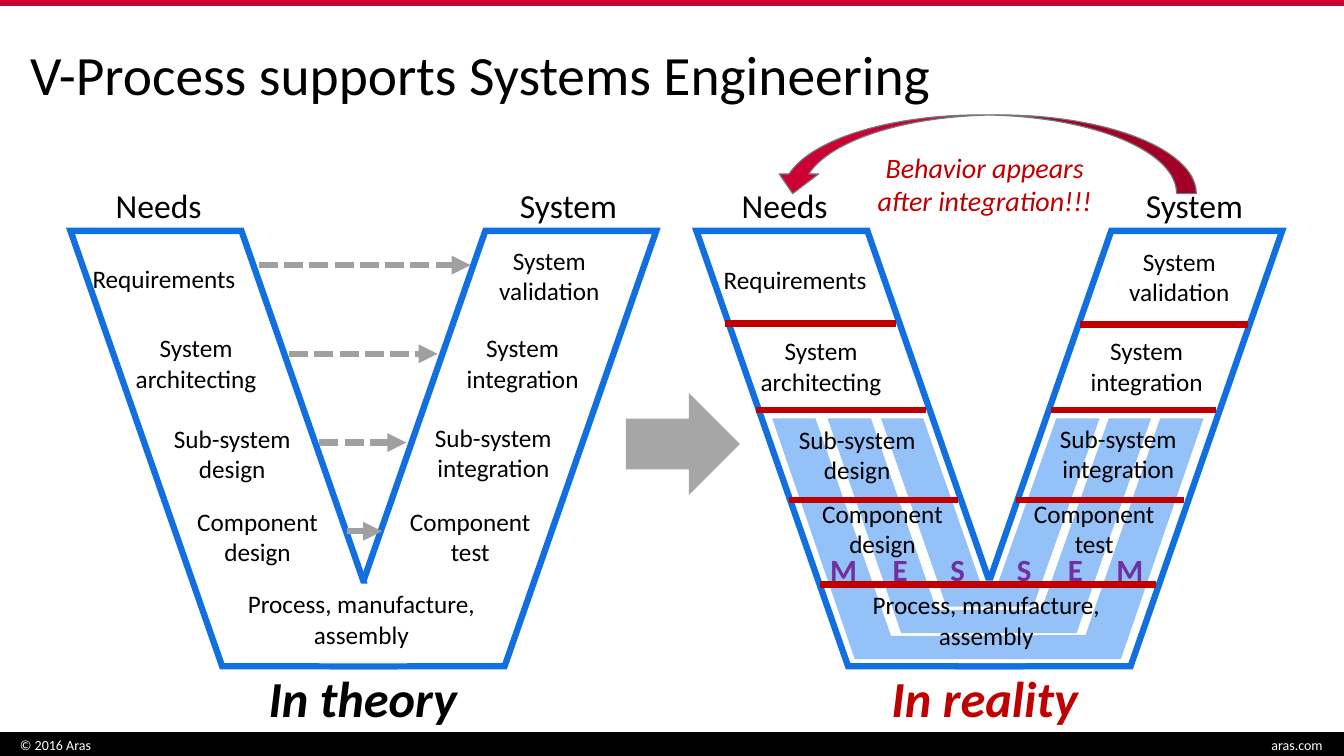
import dataclasses
import typing

import pptx
import pptx.dml.color
import pptx.enum.dml
import pptx.enum.shapes
import pptx.enum.text
import pptx.oxml.ns
import pptx.oxml.xmlchemy
import pptx.util

Pt = pptx.util.Pt
Preset = pptx.enum.shapes.MSO_SHAPE
Align = pptx.enum.text.PP_ALIGN
Anchor = pptx.enum.text.MSO_ANCHOR

COLORS = {
    "black": "000000", "white": "FFFFFF", "crimson": "CC0033", "red": "C00000",
    "blue": "126FE0", "sky": "94C1F7", "purple": "7030A0",
    "gray": "A6A6A6", "arrow": "A0A0A0", "outline": "767676",
}
Point = tuple[float, float]
Box = tuple[float, float, float, float]


@dataclasses.dataclass(frozen=True)
class Stage:
    text: str
    width: float
    theory: Point
    reality: Point
    height: float = 51
    size: float = 18
    align: typing.Any = Align.CENTER
    wrap: bool = False


@dataclasses.dataclass(frozen=True)
class Span:
    start: float
    end: float
    y: float


STAGES = [
    Stage("Needs", 76.3, (75.6, 128.9), (522.7, 128.9), 36, 24, Align.LEFT),
    Stage("System", 84.2, (364.3, 128.9), (811.4, 128.9), 36, 24, Align.LEFT),
    Stage("Requirements", 118, (59, 184.3), (509.8, 185), 28.8, align=Align.LEFT),
    Stage("System\narchitecting", 101.5, (89.3, 234), (535.7, 236.2)),
    Stage("Sub-system\ndesign", 98.6, (116.6, 298.8), (563, 299.5)),
    Stage("Component\ndesign", 101.5, (133.2, 357.8), (579.6, 352.1)),
    Stage("Process, manufacture, assembly", 182.2, (167, 416.9), (613.4, 417.6), wrap=True),
    Stage("Component\ntest", 101.5, (285.1, 357.8), (730.8, 352.1)),
    Stage("Sub-system\nintegration", 98.6, (303.1, 298.1), (749.5, 298.8)),
    Stage("System\nintegration", 95.8, (325.4, 234), (771.1, 236.2)),
    Stage("System validation", 109.4, (337.7, 171.4), (787.7, 172.1), wrap=True),
]
THEORY_ARROWS = [
    Span(start, end, 189.4 + 63.35 * row)
    for row, (start, end) in enumerate(
        [(185, 336.2), (206.6, 312.5), (228.2, 290.2), (247.7, 272.9)])
]
BARRIERS = [
    Span(517.7, 640.1, 231.1), Span(771.1, 891.4, 231.8),
    Span(540, 661.7, 293), Span(751, 868.3, 293),
    Span(563.8, 684, 357.1), Span(725.8, 846, 357.1),
    Span(585.4, 705.6, 417.6), Span(705.6, 825.8, 417.6),
]
BAND_TOP = 298.8
BANDS: list[list[Point]] = [
    [(551.5, BAND_TOP), (582.5, BAND_TOP), (636.5, 454.3), (775.4, 453.6),
     (828.7, BAND_TOP), (859.7, BAND_TOP), (800.6, 470.9), (610.6, 470.9)],
    [(591.1, BAND_TOP), (622.1, BAND_TOP), (668.9, 435.6), (743.8, 435.6),
     (792, BAND_TOP), (822.2, BAND_TOP), (769, 452.2), (643.7, 452.2)],
    [(629.3, BAND_TOP), (659.5, BAND_TOP), (700.6, 416.9), (712.8, 416.9),
     (754.6, BAND_TOP), (785.5, BAND_TOP), (738, 433.4), (676.1, 433.4)],
]
BAND_LETTERS = [("M", 580.3), ("E", 620.6), ("S", 661.7),
                ("S", 709.2), ("E", 745.9), ("M", 784.8)]


def rgb(name: str) -> pptx.dml.color.RGBColor:
    return pptx.dml.color.RGBColor.from_string(COLORS[name])


def paint(shape, fill: str | None, line: str | None = None, weight: float = 0.85) -> None:
    shape.shadow.inherit = False
    if fill:
        shape.fill.solid()
        shape.fill.fore_color.rgb = rgb(fill)
    else:
        shape.fill.background()
    if line:
        shape.line.color.rgb = rgb(line)
        shape.line.width = Pt(weight)
    else:
        shape.line.fill.background()


def add_preset(page, preset, box: Box, fill: str | None, line: str | None = None,
               weight: float = 0.85, flip: bool = False):
    shape = page.shapes.add_shape(preset, *map(Pt, box))
    paint(shape, fill, line, weight)
    if flip:
        shape.element.spPr.find(pptx.oxml.ns.qn("a:xfrm")).set("flipH", "1")
    return shape


def add_text(page, text: str, box: Box, *, size: float = 18, color: str = "black",
             bold: bool = False, italic: bool = False, align=Align.CENTER,
             anchor=Anchor.TOP, wrap: bool = True, spacing: float = 1,
             inset: float = 7.2) -> None:
    frame = page.shapes.add_textbox(*map(Pt, box)).text_frame
    frame.word_wrap = wrap
    frame.vertical_anchor = anchor
    frame.margin_left = Pt(inset)
    frame.text = text
    for para in frame.paragraphs:
        para.alignment = align
        para.line_spacing = spacing
        for span in para.runs:
            span.font.name = "Calibri"
            span.font.size = Pt(size)
            span.font.bold = bold
            span.font.italic = italic
            span.font.color.rgb = rgb(color)


def add_line(page, span: Span, color: str, arrow: bool = False) -> None:
    line = page.shapes.add_connector(
        pptx.enum.shapes.MSO_CONNECTOR.STRAIGHT,
        Pt(span.start), Pt(span.y), Pt(span.end), Pt(span.y))
    line.line.color.rgb = rgb(color)
    line.line.width = Pt(4.5)
    properties = line.element.spPr
    if arrow:
        line.line.dash_style = pptx.enum.dml.MSO_LINE.SQUARE_DOT
        head = pptx.oxml.xmlchemy.OxmlElement("a:tailEnd")
        head.set("type", "triangle")
        properties.find(pptx.oxml.ns.qn("a:ln")).append(head)
    properties.append(pptx.oxml.xmlchemy.OxmlElement("a:effectLst"))


def add_v(page, left: float, fill: str | None, patches: list[Box]) -> None:
    for offset, flip in [(188, False), (0, True)]:
        arm = add_preset(page, Preset.PARALLELOGRAM, (left + offset, 164.9, 230.4, 311),
                         fill, "blue", 4.5, flip)
        arm.adjustments[0] = 0.47
        miter = pptx.oxml.xmlchemy.OxmlElement("a:miter")
        miter.set("lim", "800000")
        arm.element.spPr.find(pptx.oxml.ns.qn("a:ln")).append(miter)
    for patch in patches:
        add_preset(page, Preset.RECTANGLE, patch, "white")


def add_band(page, points: list[Point]) -> None:
    corners = [(Pt(x), Pt(y)) for x, y in points]
    builder = page.shapes.build_freeform(*corners[0], scale=1.0)
    builder.add_line_segments(corners[1:], close=True)
    paint(builder.convert_to_shape(), "sky")


def add_stage(page, stage: Stage, place: Point) -> None:
    add_text(page, stage.text, (*place, stage.width, stage.height),
             size=stage.size, align=stage.align, wrap=stage.wrap)


def main() -> None:
    deck = pptx.Presentation()
    deck.slide_width, deck.slide_height = Pt(960), Pt(540)
    page = deck.slides.add_slide(deck.slide_layouts[6])

    add_preset(page, Preset.RECTANGLE, (0, 523.4, 960, 16.6), "black", "black")
    add_preset(page, Preset.RECTANGLE, (0, 0, 960, 3.6), "crimson", "crimson")
    add_text(page, "V-Process supports Systems Engineering", (7.2, 14.4, 681.8, 82.1),
             size=39.6, align=Align.LEFT, anchor=Anchor.MIDDLE, spacing=0.9, inset=14.4)
    add_text(page, "© 2016 Aras", (7.2, 523.4, 295.2, 18), size=10, color="white",
             align=Align.LEFT, anchor=Anchor.MIDDLE)
    add_text(page, "aras.com", (627.8, 523.4, 324, 18), size=10, color="white",
             align=Align.RIGHT, anchor=Anchor.MIDDLE)
    add_preset(page, Preset.RIGHT_ARROW, (447.1, 280.8, 81.4, 72.7), "gray")

    add_v(page, 50.4, "white", [(228.2, 419.8, 62.6, 54), (167, 416.9, 182.2, 51.1)])
    for arrow in THEORY_ARROWS:
        add_line(page, arrow, "arrow", arrow=True)
    for stage in STAGES:
        add_stage(page, stage, stage.theory)
    add_text(page, "In theory", (176.4, 473, 165.6, 51), size=36, bold=True, italic=True)

    add_text(page, "Behavior appears after integration!!!", (612, 103.7, 182.9, 55.4),
             size=20, color="red", italic=True)
    add_preset(page, Preset.CURVED_DOWN_ARROW, (552.2, 82.1, 302.4, 56.2),
               "crimson", "outline", flip=True)
    add_v(page, 497.5, None, [(684, 414.7, 49, 59)])
    for band in BANDS:
        add_band(page, band)
    for letter, left in BAND_LETTERS:
        add_text(page, letter, (left, 390.2, 44.6, 33.8), size=22, color="purple", bold=True)
    for stage in STAGES:
        add_stage(page, stage, stage.reality)
    for barrier in BARRIERS:
        add_line(page, barrier, "red")
    add_text(page, "In reality", (620.6, 473, 165.6, 51), size=36, color="red",
             bold=True, italic=True)

    deck.save("out.pptx")


if __name__ == "__main__":
    main()
